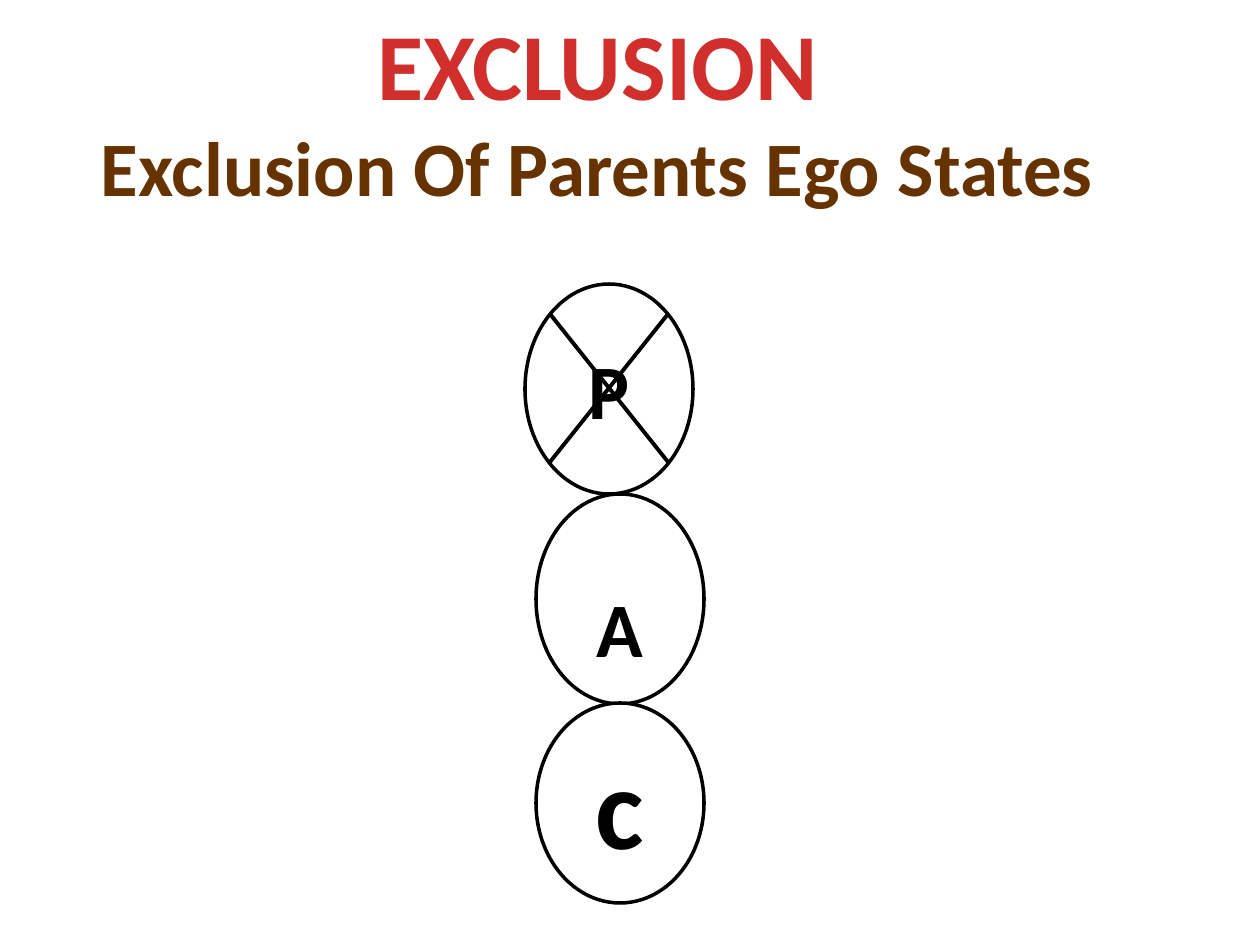
from dataclasses import dataclass

import pptx
import pptx.dml.color
import pptx.enum.shapes
import pptx.enum.text
import pptx.oxml.ns
import pptx.util
from lxml import etree

RGB = pptx.dml.color.RGBColor
ANCHOR = pptx.enum.text.MSO_ANCHOR
BLACK = RGB(0x00, 0x00, 0x00)
WHITE = RGB(0xFF, 0xFF, 0xFF)
RED = RGB(0xD0, 0x2F, 0x2C)
BROWN = RGB(0x66, 0x33, 0x00)

SCALE = 914400 / 126  # EMU per px


def px(n: int) -> int:
    return round(n * SCALE)


@dataclass
class State:
    text: str
    left: int
    top: int
    high: int
    size: int = 44
    anchor: ANCHOR = ANCHOR.MIDDLE


WIDE = 168
STATES = [
    State("A", 536, 494, 210, anchor=ANCHOR.BOTTOM),
    State("P", 525, 284, 210),
    State("c", 536, 703, 200, size=66),
]


def write(para, text: str, *, size: int, color: RGB = BLACK) -> None:
    para.alignment = pptx.enum.text.PP_ALIGN.CENTER
    run = para.add_run()
    run.text = text
    font = run.font
    font.name = "Calibri"
    font.size = pptx.util.Pt(size)
    font.bold = True
    font.color.rgb = color


def oval(slide, state: State) -> None:
    shape = slide.shapes.add_shape(
        pptx.enum.shapes.MSO_SHAPE.OVAL,
        px(state.left), px(state.top), px(WIDE), px(state.high))
    shape.shadow.inherit = False
    shape.fill.solid()
    shape.fill.fore_color.rgb = WHITE
    shape.line.color.rgb = BLACK
    shape.line.width = pptx.util.Pt(2)
    frame = shape.text_frame
    frame.margin_top = frame.margin_bottom = 0
    frame.vertical_anchor = state.anchor
    write(frame.paragraphs[0], state.text, size=state.size)


def line(slide, x1: int, y1: int, x2: int, y2: int) -> None:
    stroke = slide.shapes.add_connector(
        pptx.enum.shapes.MSO_CONNECTOR.STRAIGHT,
        px(x1), px(y1), px(x2), px(y2))
    stroke.line.color.rgb = BLACK
    stroke.line.width = pptx.util.Pt(2.25)
    etree.SubElement(stroke._element.spPr, pptx.oxml.ns.qn("a:effectLst"))


def title(slide) -> None:
    box = slide.shapes.add_textbox(px(84), 0, px(1027), px(220))
    frame = box.text_frame
    frame.word_wrap = False
    frame.auto_size = pptx.enum.text.MSO_AUTO_SIZE.SHAPE_TO_FIT_TEXT
    write(frame.paragraphs[0], "EXCLUSION", size=54, color=RED)
    write(frame.add_paragraph(), "Exclusion Of Parents Ego States",
          size=44, color=BROWN)


def main() -> None:
    deck = pptx.Presentation()
    deck.slide_width, deck.slide_height = px(1260), px(945)
    slide = deck.slides.add_slide(deck.slide_layouts[6])

    # Ego states
    for state in STATES:
        oval(slide, state)

    # Cross over the excluded state
    left, right, top, low = 550, 668, 314, 462
    line(slide, left, top, right, low)
    line(slide, left, low, right, top)

    # Heading
    title(slide)
    deck.save("out.pptx")


if __name__ == "__main__":
    main()
